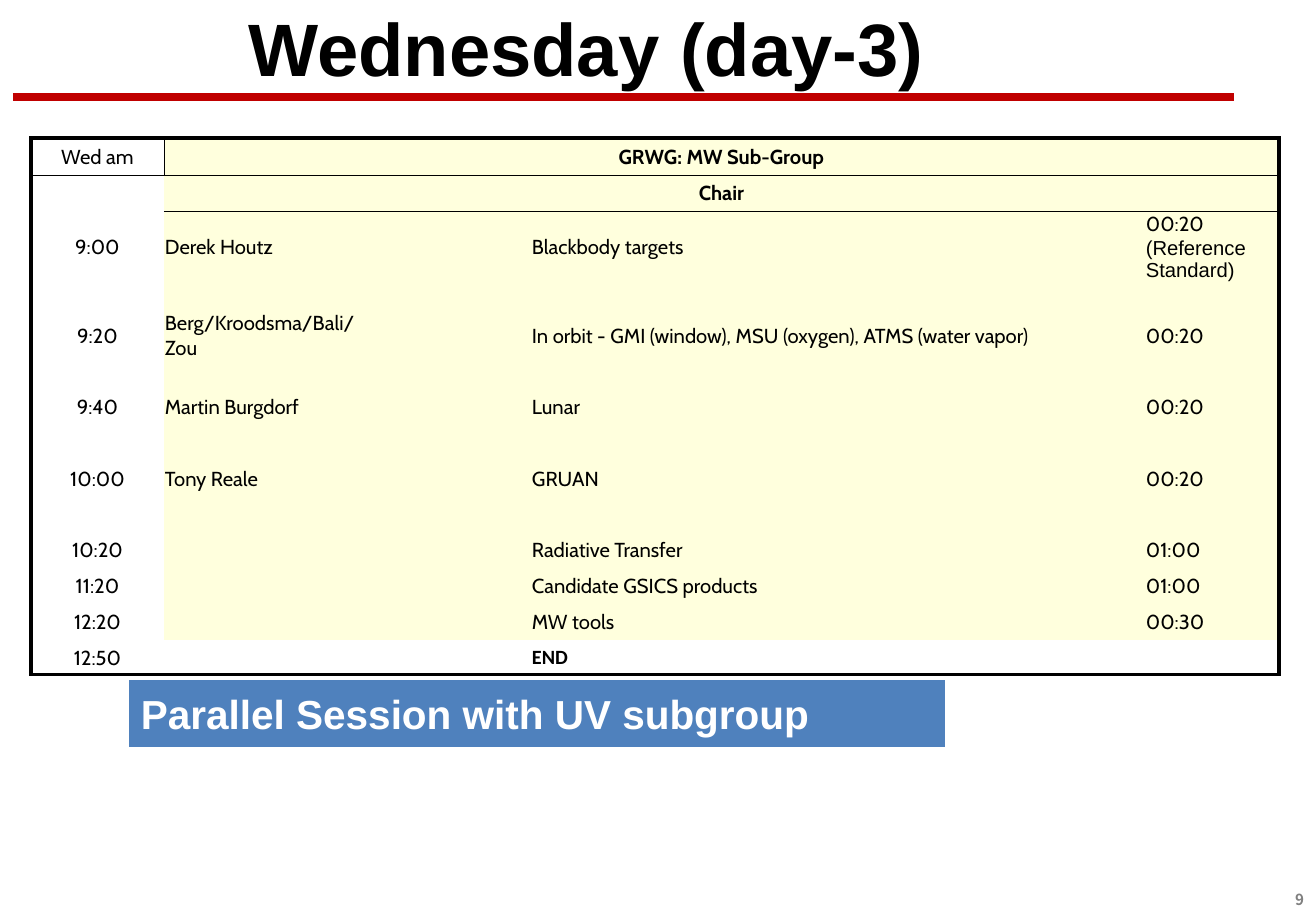
"""Build the Wednesday agenda slide with its session timetable."""
from lxml import etree
from pptx import Presentation
from pptx.dml.color import RGBColor
from pptx.enum.shapes import MSO_CONNECTOR, MSO_SHAPE
from pptx.enum.text import MSO_ANCHOR, MSO_AUTO_SIZE, PP_ALIGN
from pptx.oxml.ns import qn
from pptx.util import Emu, Pt

LEFT, CENTER, RIGHT = PP_ALIGN.LEFT, PP_ALIGN.CENTER, PP_ALIGN.RIGHT
MIDDLE = MSO_ANCHOR.MIDDLE
NO_FIT = MSO_AUTO_SIZE.NONE
RECTANGLE = MSO_SHAPE.RECTANGLE
STRAIGHT = MSO_CONNECTOR.STRAIGHT

PX = 914400 / 121.5
NO_GRID_STYLE = "{2D5ABB26-0587-4C30-8999-92F81FD0307C}"
THICK, THIN = 2.25, 0.5
COLORS = {
    "black": "000000",
    "white": "FFFFFF",
    "red": "C00000",
    "blue": "4F81BD",
    "cream": "FFFFDD",
    "gray": "808080",
}

COLUMNS = [133, 210, 157, 561, 53, 134]
ROWS = [37, 36, 71, 107, 36, 107, 36, 36, 36, 35]
AGENDA = [
    ("Wed am", "GRWG: MW Sub-Group", "", ""),
    ("", "Chair", "", ""),
    ("9:00", "Derek Houtz", "Blackbody targets", "00:20\n(Reference Standard)"),
    ("9:20", "Berg/Kroodsma/Bali/Zou",
     "In orbit - GMI (window), MSU (oxygen), ATMS (water vapor)", "00:20"),
    ("9:40", "Martin Burgdorf", "Lunar", "00:20"),
    ("10:00", "Tony Reale", "GRUAN", "00:20"),
    ("10:20", "", "Radiative Transfer", "01:00"),
    ("11:20", "", "Candidate GSICS products", "01:00"),
    ("12:20", "", "MW tools", "00:30"),
    ("12:50", "", "END", ""),
]


def px(n):
    return Emu(round(n * PX))


def rgb(name):
    return RGBColor.from_string(COLORS[name])


class Deck:
    """Holds the slide and the style, with one method per kind of element."""

    def __init__(self, width, height):
        self.prs = Presentation()
        self.prs.slide_width, self.prs.slide_height = px(width), px(height)
        self.s = self.prs.slides.add_slide(self.prs.slide_layouts[5])

    def style(self, p, size, font="Arial", color="black", bold=True, align=LEFT):
        p.alignment = align
        f = p.font
        f.size, f.name, f.bold = Pt(size), font, bold
        f.color.rgb = rgb(color)

    def label(self, sp, text, size, **style):
        tf = sp.text_frame
        tf.text = text
        tf.word_wrap = True
        tf.auto_size = NO_FIT
        tf.vertical_anchor = MIDDLE
        self.style(tf.paragraphs[0], size, **style)

    def title(self, text, x, y, w, h):
        sp = self.s.shapes.title
        sp.left, sp.top, sp.width, sp.height = map(px, (x, y, w, h))
        self.label(sp, text, 44, align=CENTER)

    def rule(self, x1, x2, y, color, width):
        line = self.s.shapes.add_connector(STRAIGHT, px(x1), px(y), px(x2), px(y))
        line.line.color.rgb = rgb(color)
        line.line.width = Pt(width)
        etree.SubElement(line._element.spPr, qn("a:effectLst"))

    def banner(self, text, x, y, w, h):
        sp = self.s.shapes.add_shape(RECTANGLE, px(x), px(y), px(w), px(h))
        sp.shadow.inherit = False
        sp.fill.solid()
        sp.fill.fore_color.rgb = rgb("blue")
        sp.line.fill.background()
        self.label(sp, text, 24, color="white")

    def page_number(self, text, x, y, w, h):
        sp = self.s.shapes.add_textbox(px(x), px(y), px(w), px(h))
        self.label(sp, text, 9, font="Noto Sans CJK KR", color="gray", align=RIGHT)

    def borders(self, cell, widths):
        tcPr = cell._tc.get_or_add_tcPr()
        for side, width in zip("LRTB", widths):
            ln = etree.SubElement(tcPr, qn(f"a:ln{side}"), w=str(Pt(width)))
            if width:
                fill = etree.SubElement(ln, qn("a:solidFill"))
                etree.SubElement(fill, qn("a:srgbClr"), val=COLORS["black"])
            else:
                etree.SubElement(ln, qn("a:noFill"))

    def cell(self, cell, text, fill, widths, **style):
        cell.margin_left = cell.margin_right = cell.margin_top = px(1)
        cell.margin_bottom = 0
        cell.vertical_anchor = MIDDLE
        self.borders(cell, widths)
        cell.fill.solid()
        cell.fill.fore_color.rgb = rgb(fill)
        cell.text_frame.text = text
        first, *notes = cell.text_frame.paragraphs
        self.style(first, 12, **style)
        if not text:
            etree.SubElement(first._p, qn("a:endParaRPr"), sz="1200")
        for p in notes:
            self.style(p, 12, bold=False)

    def timetable(self, x, y):
        last_row, last_col = len(ROWS) - 1, len(COLUMNS) - 1
        frame = self.s.shapes.add_table(len(ROWS), len(COLUMNS), px(x), px(y),
                                        px(sum(COLUMNS)), px(sum(ROWS)))
        table = frame.table
        table.first_row = table.horz_banding = False
        table._tbl.tblPr.find(qn("a:tableStyleId")).text = NO_GRID_STYLE
        for column, width in zip(table.columns, COLUMNS):
            column.width = px(width)
        for row, height in zip(table.rows, ROWS):
            row.height = px(height)
        for i, (time, speaker, topic, length) in enumerate(AGENDA):
            heading = i < 2
            for j, text in enumerate((time, speaker, "", topic, "", length)):
                in_heading = heading and j > 0
                left = THICK if j == 0 else THIN if (i, j) == (0, 1) else 0
                right = THICK if j == last_col or in_heading else 0
                if (i, j) == (0, 0):
                    right = THIN
                top = THICK if i == 0 else THIN if i == 1 or (i == 2 and j) else 0
                bottom = THICK if i == last_row else THIN if i == 0 or in_heading else 0
                self.cell(
                    table.cell(i, j), text,
                    "white" if j == 0 or i == last_row else "cream",
                    (left, right, top, bottom),
                    font="Calibri" if text == "END" else "Cabin",
                    bold=in_heading or text == "END",
                    align=CENTER if j == 0 or heading else LEFT)
            if heading:
                table.cell(i, 1).merge(table.cell(i, last_col))


def main():
    deck = Deck(1316, 911)
    deck.rule(13, 1234, 97, "red", 4.5)
    deck.page_number("9", 1203, 884, 113, 30)
    deck.title("Wednesday (day-3)", 19, 10, 1135, 73)
    deck.timetable(31, 138)
    deck.banner("Parallel Session with UV subgroup", 129, 680, 816, 67)
    deck.prs.save("out.pptx")


if __name__ == "__main__":
    main()
